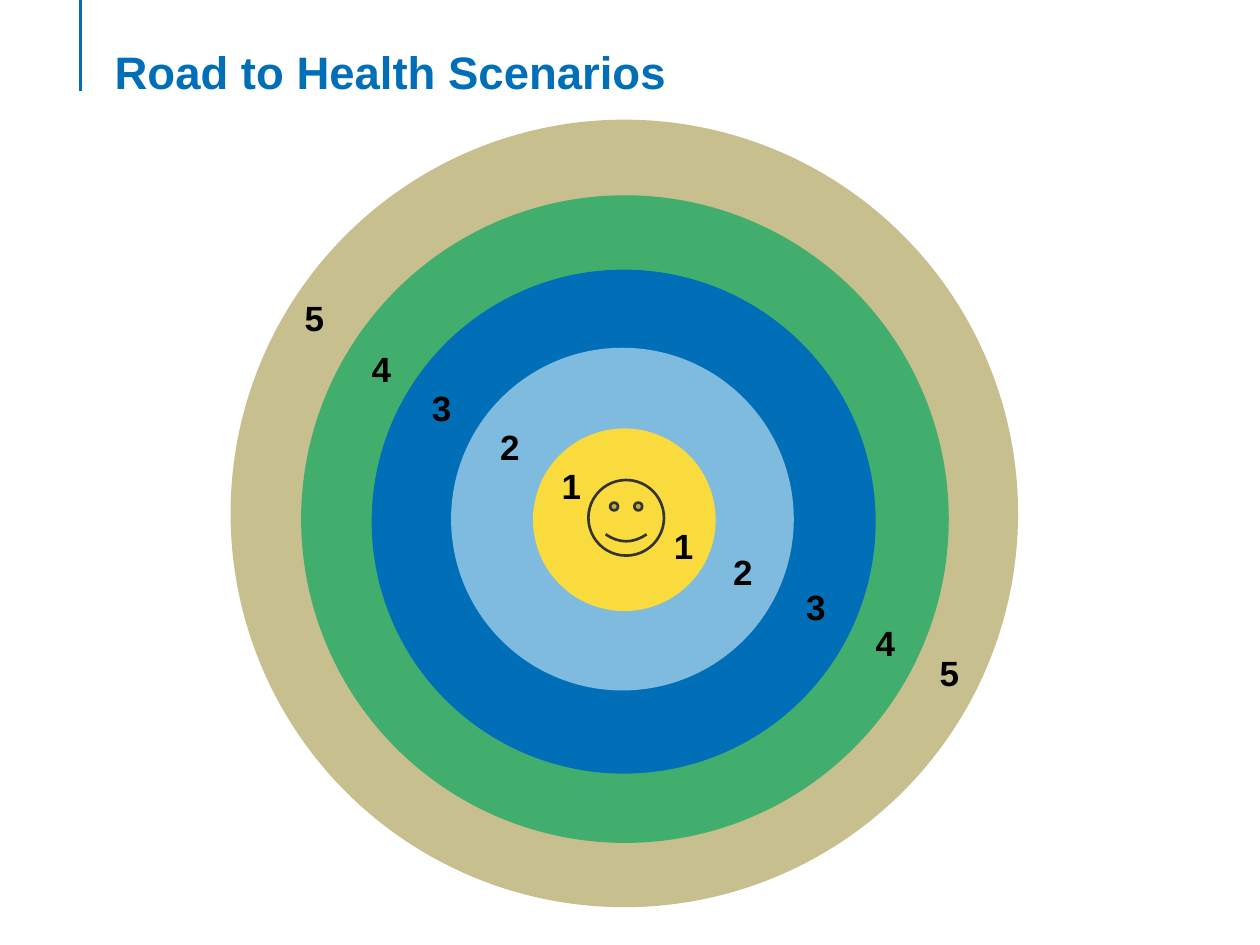
from pptx import Presentation
from pptx.dml.color import RGBColor
from pptx.enum.shapes import MSO_CONNECTOR, MSO_SHAPE
from pptx.enum.text import MSO_ANCHOR, PP_ALIGN
from pptx.oxml.ns import qn
from pptx.util import Inches, Pt
from lxml.etree import SubElement

WIDE, HIGH = Inches(10), Inches(7.5)
COLS = 100
BLUE = "006FB7"
RINGS = [
    (18.3, 9.5, 62.5, "C8BF8F"),
    (23.9, 15.5, 51.4, "42AE6D"),
    (29.5, 21.4, 40, BLUE),
    (35.8, 27.6, 27.2, "7FBADF"),
    (42.3, 34, 14.5, "F9DB3E"),
]
LOWER = [(73.6, 50.7), (68.5, 48.3), (63, 45.5), (57.2, 42.7), (52.5, 40.6)]
UPPER = [(23.2, 22.5), (28.5, 26.6), (33.3, 29.7), (38.7, 32.8), (43.6, 35.9)]


def cells(*counts):
    """Turn counts of square grid cells into lengths."""
    return [round(WIDE * count / COLS) for count in counts]


def paint(target, color):
    """Give a font, fill or line its colour from a hex string."""
    target.rgb = RGBColor.from_string(color)


def write(frame, text, size, color, inset):
    """Set bold left-aligned text at the top of a frame."""
    frame.text = text
    frame.word_wrap = True
    frame.vertical_anchor = MSO_ANCHOR.TOP
    frame.margin_left = frame.margin_right = Inches(0.1)
    frame.margin_top = frame.margin_bottom = Inches(inset)
    line = frame.paragraphs[0]
    line.alignment = PP_ALIGN.LEFT
    font = line.runs[0].font
    font.name, font.size, font.bold = "Arial", Pt(size), True
    paint(font.color, color)


def add_title(slide, text):
    """Place the title and the rule to its left."""
    x, end = cells(6.4, 7.2)
    rule = slide.shapes.add_connector(MSO_CONNECTOR.STRAIGHT, x, 0, x, end)
    rule.line.width = Pt(2)
    paint(rule.line.color, BLUE)
    SubElement(rule._element.spPr, qn("a:effectLst"))
    title = slide.shapes.title
    title.left, title.top, title.width, title.height = cells(8.1, 3, 82.7, 11.9)
    write(title.text_frame, text, 26, BLUE, 0.05)


def add_round(group, kind, left, top, size, fill, edge=None):
    """Add a round shape, outlined only when an edge colour is given."""
    shape = group.shapes.add_shape(kind, *cells(left, top, size, size))
    shape.shadow.inherit = False
    shape.fill.solid()
    paint(shape.fill.fore_color, fill)
    if edge:
        shape.line.width = Pt(1.5)
        paint(shape.line.color, edge)
    else:
        shape.line.fill.background()


def add_marks(group, spots):
    """Number the rings from the outermost inwards."""
    for index, spot in enumerate(spots):
        box = group.shapes.add_textbox(*cells(*spot, 2.9, 4.1))
        write(box.text_frame, str(len(spots) - index), 20, "000000", 0.1)


def main():
    """Build and save the slide."""
    deck = Presentation()
    deck.slide_width, deck.slide_height = WIDE, HIGH
    slide = deck.slides.add_slide(deck.slide_layouts[5])
    add_title(slide, "Road to Health Scenarios")
    group = slide.shapes.add_group_shape()
    for ring in RINGS:
        add_round(group, MSO_SHAPE.OVAL, *ring)
    add_round(group, MSO_SHAPE.SMILEY_FACE, 46.7, 38.1, 6, "F9DB3E", "333333")
    for spots in (LOWER, UPPER):
        add_marks(group, spots)
    deck.save("out.pptx")


if __name__ == "__main__":
    main()
